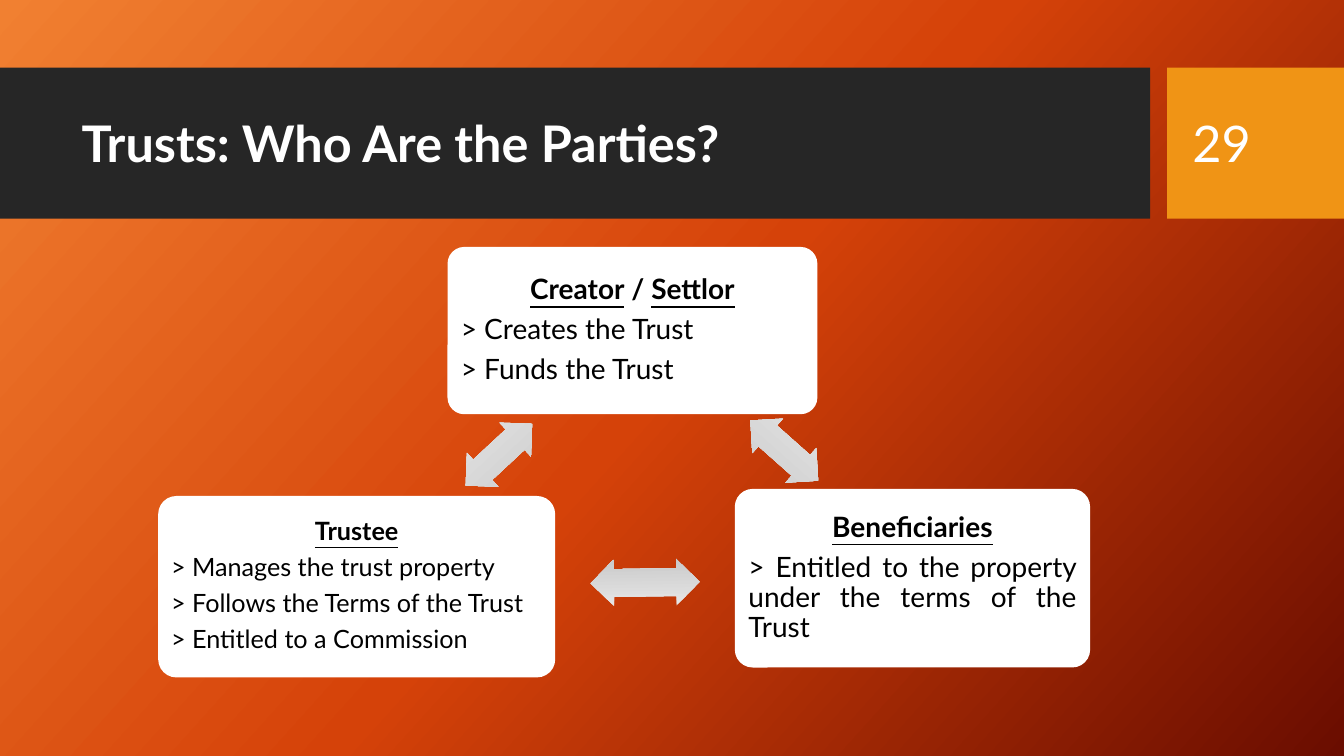
from dataclasses import dataclass

from lxml import etree
from pptx import Presentation
from pptx.dml.color import RGBColor
from pptx.dml.fill import FillFormat
from pptx.enum.shapes import MSO_SHAPE
from pptx.enum.text import MSO_ANCHOR, MSO_AUTO_SIZE, PP_ALIGN
from pptx.oxml.ns import qn
from pptx.shapes.autoshape import Shape
from pptx.slide import Slide
from pptx.text.text import Font
from pptx.util import Pt

RECTANGLE = MSO_SHAPE.RECTANGLE
ROUNDED = MSO_SHAPE.ROUNDED_RECTANGLE
DOUBLE_ARROW = MSO_SHAPE.LEFT_RIGHT_ARROW
MIDDLE = MSO_ANCHOR.MIDDLE
LEFT, CENTER, JUSTIFY = PP_ALIGN.LEFT, PP_ALIGN.CENTER, PP_ALIGN.JUSTIFY
NO_AUTOFIT = MSO_AUTO_SIZE.NONE

WHITE = RGBColor(0xFF, 0xFF, 0xFF)
BLACK = RGBColor(0x00, 0x00, 0x00)
CHARCOAL = RGBColor(0x26, 0x26, 0x26)
AMBER = RGBColor(0xF0, 0x94, 0x15)
BACKGROUND_STOPS = [
    (0, RGBColor(0xF1, 0x80, 0x31)),
    (50, RGBColor(0xD5, 0x42, 0x09)),
    (100, RGBColor(0x6A, 0x0D, 0x00)),
]
ARROW_STOPS = [(0, RGBColor(0xE7, 0xE7, 0xE7)), (100, RGBColor(0xC9, 0xC9, 0xC9))]

FONT_NAME = "Lato"
HEADING_SIZE = 36
LINE_SPACING = 0.9
SPACE_AFTER_RATIO = 0.35


@dataclass(frozen=True)
class Box:
    left: float
    top: float
    width: float
    height: float

    def lengths(self) -> tuple[Pt, Pt, Pt, Pt]:
        return Pt(self.left), Pt(self.top), Pt(self.width), Pt(self.height)


@dataclass(frozen=True)
class Party:
    box: Box
    names: tuple[str, ...]
    roles: tuple[str, ...]
    size: float
    margin: float
    role_alignment: PP_ALIGN = LEFT


@dataclass(frozen=True)
class Arrow:
    box: Box
    rotation: float


BANDS = [
    (Box(0, 48.24, 821.5, 108), CHARCOAL),
    (Box(833.76, 48.24, 126.24, 108), AMBER),
]
PARTIES = [
    Party(Box(319.7, 176.4, 264.2, 119.5), ("Creator", "Settlor"),
          ("> Creates the Trust", "> Funds the Trust"), 20, 6),
    Party(Box(524.9, 349.2, 253.8, 127.6), ("Beneficiaries",),
          ("> Entitled to the property under the terms of the Trust",), 20, 6, JUSTIFY),
    Party(Box(113, 354.3, 283.6, 129.6), ("Trustee",),
          ("> Manages the trust property", "> Follows the Terms of the Trust",
           "> Entitled to a Commission"), 18, 5.4),
]
ARROWS = [
    Arrow(Box(527.8, 305.3, 64.8, 33.1), 41.6),
    Arrow(Box(421.9, 399.6, 77.8, 33.1), 179.2),
    Arrow(Box(324, 308.2, 64.8, 33.1), 317.1),
]


def set_font(font: Font, size: float, color: RGBColor, bold: bool = False) -> None:
    font.name = FONT_NAME
    font.size = Pt(size)
    font.bold = bold
    font.color.rgb = color


def set_gradient(fill: FillFormat, owner: etree.ElementBase,
                 stops: list[tuple[int, RGBColor]], clockwise_angle: float) -> None:
    fill.gradient()
    fill.gradient_angle = 360 - clockwise_angle
    stop_list = owner.find(".//" + qn("a:gsLst"))
    for old_stop in list(stop_list):
        stop_list.remove(old_stop)
    for position, color in stops:
        stop = etree.SubElement(stop_list, qn("a:gs"), pos=str(position * 1000))
        etree.SubElement(stop, qn("a:srgbClr"), val=str(color))


def add_plain_shape(slide: Slide, kind: MSO_SHAPE, box: Box) -> Shape:
    shape = slide.shapes.add_shape(kind, *box.lengths())
    shape.shadow.inherit = False
    shape.line.fill.background()
    return shape


def add_filled_shape(slide: Slide, kind: MSO_SHAPE, box: Box, color: RGBColor) -> Shape:
    shape = add_plain_shape(slide, kind, box)
    shape.fill.solid()
    shape.fill.fore_color.rgb = color
    return shape


def add_party(slide: Slide, party: Party) -> None:
    shape = add_filled_shape(slide, ROUNDED, party.box, WHITE)
    shape.adjustments[0] = 0.1
    frame = shape.text_frame
    frame.word_wrap = True
    frame.vertical_anchor = MIDDLE
    frame.margin_left = frame.margin_right = Pt(party.margin)
    frame.margin_top = frame.margin_bottom = Pt(party.margin)

    # Underlined names, separated by a plain slash
    heading = frame.paragraphs[0]
    for index, name in enumerate(party.names):
        if index:
            heading.add_run().text = " / "
        run = heading.add_run()
        run.text = name
        run.font.underline = True

    for role in party.roles:
        frame.add_paragraph().text = role
    for paragraph in frame.paragraphs:
        is_heading = paragraph is frame.paragraphs[0] or paragraph.text == heading.text
        paragraph.alignment = CENTER if is_heading else party.role_alignment
        paragraph.line_spacing = LINE_SPACING
        paragraph.space_after = Pt(party.size * SPACE_AFTER_RATIO)
        set_font(paragraph.font, party.size, BLACK, bold=is_heading)


def add_arrow(slide: Slide, arrow: Arrow) -> None:
    shape = add_plain_shape(slide, DOUBLE_ARROW, arrow.box)
    shape.adjustments[0] = 0.6
    shape.adjustments[1] = 0.5
    shape.rotation = arrow.rotation
    set_gradient(shape.fill, shape.element, ARROW_STOPS, 90)


def place_title(slide: Slide) -> None:
    title = slide.shapes.title
    title.left, title.top, title.width, title.height = Box(51.1, 56.2, 740.9, 96.5).lengths()
    frame = title.text_frame
    frame.text = "Trusts: Who Are the Parties?"
    frame.word_wrap = True
    frame.auto_size = NO_AUTOFIT
    frame.vertical_anchor = MIDDLE
    paragraph = frame.paragraphs[0]
    paragraph.alignment = LEFT
    paragraph.line_spacing = LINE_SPACING
    set_font(paragraph.font, HEADING_SIZE, WHITE, bold=True)
    # Bring the title in front of its band
    slide.shapes.element.append(title.element)


def add_page_number(slide: Slide) -> None:
    frame = slide.shapes.add_textbox(*Box(844.6, 59, 90.7, 85.7).lengths()).text_frame
    frame.text = "29"
    frame.word_wrap = True
    frame.vertical_anchor = MIDDLE
    set_font(frame.paragraphs[0].font, HEADING_SIZE, WHITE)


def main() -> None:
    presentation = Presentation()
    presentation.slide_width = Pt(960)
    presentation.slide_height = Pt(540)
    slide = presentation.slides.add_slide(presentation.slide_layouts.get_by_name("Title Only"))
    set_gradient(slide.background.fill, slide.element, BACKGROUND_STOPS, 42)

    # Header
    for box, color in BANDS:
        add_filled_shape(slide, RECTANGLE, box, color)
    place_title(slide)
    add_page_number(slide)

    # Cycle of parties
    for party in PARTIES:
        add_party(slide, party)
    for arrow in ARROWS:
        add_arrow(slide, arrow)

    presentation.save("out.pptx")


if __name__ == "__main__":
    main()
